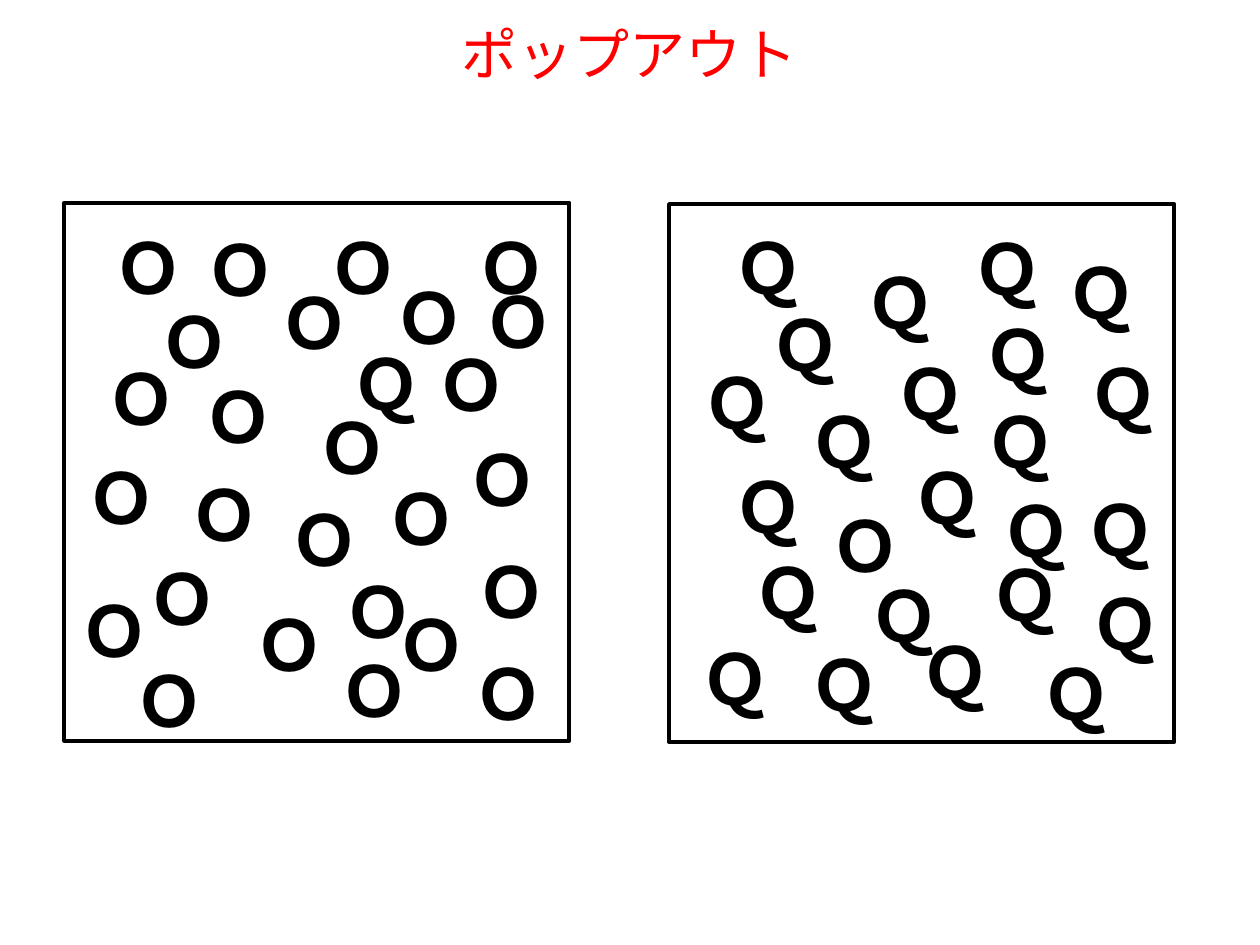
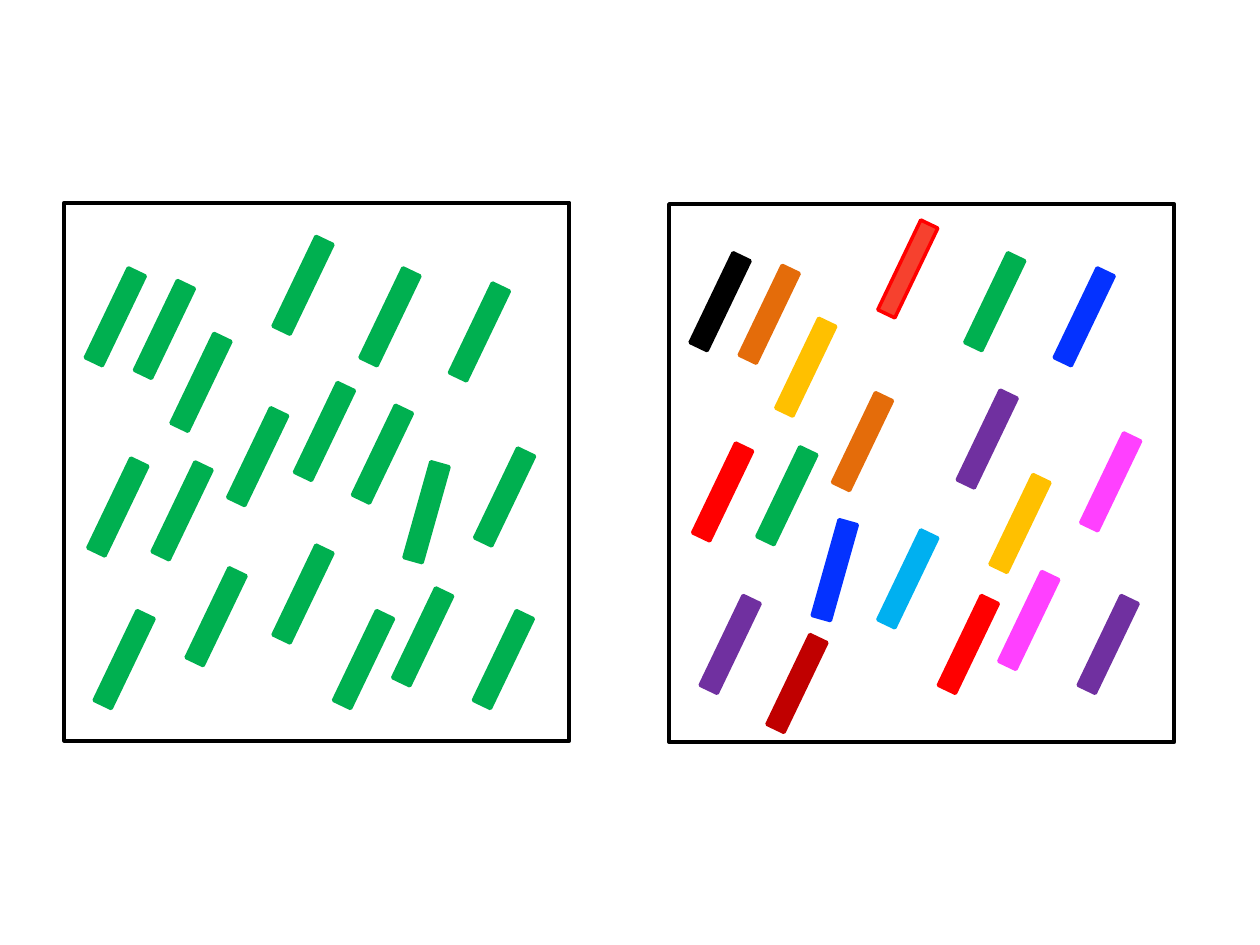
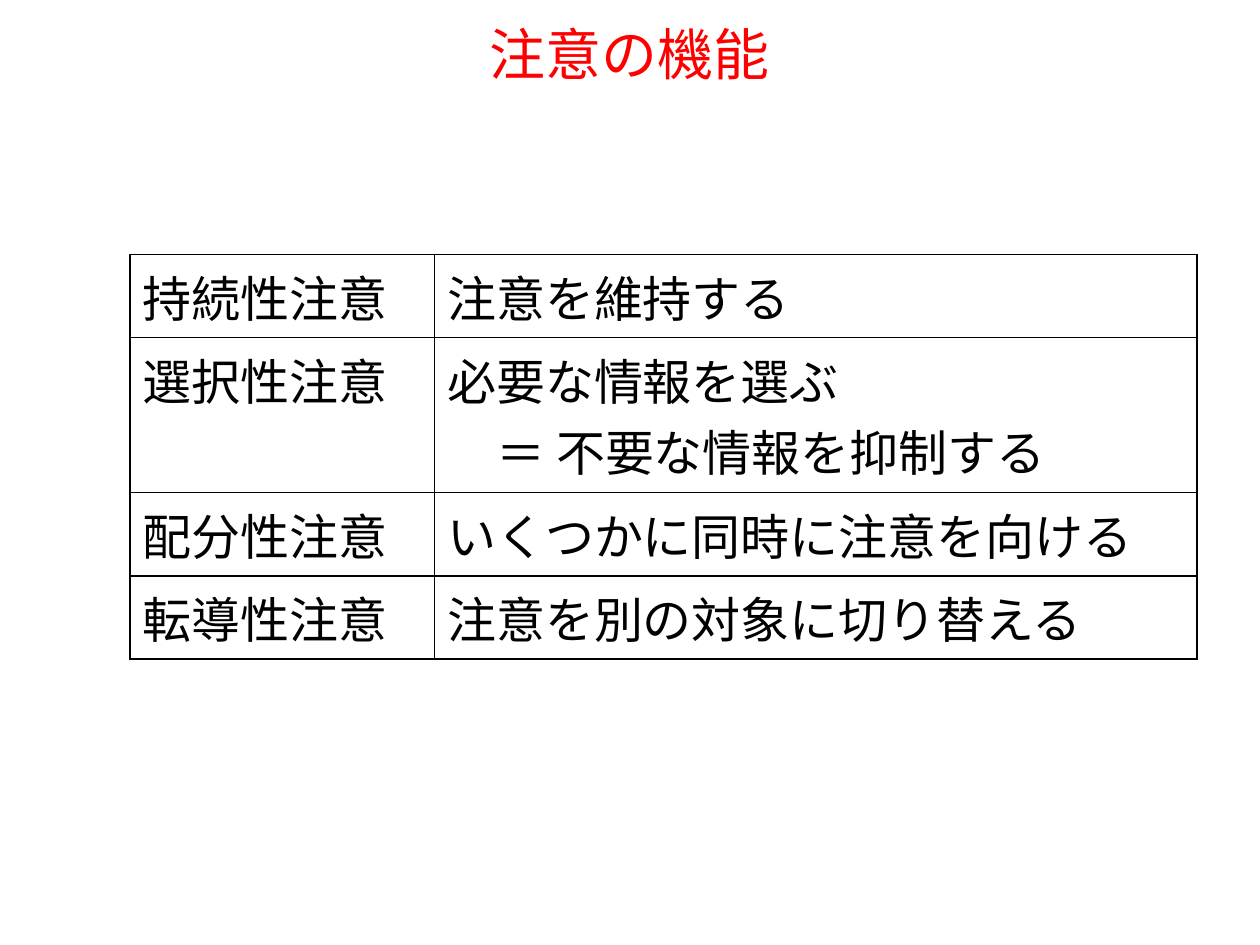
from lxml import etree
from pptx import Presentation
from pptx.dml.color import RGBColor
from pptx.enum.shapes import MSO_SHAPE as Preset
from pptx.enum.text import MSO_ANCHOR as Anchor, PP_ALIGN as Align
from pptx.oxml.ns import qn
from pptx.util import Inches, Pt

GOTHIC, SERIF = "Noto Sans CJK JP", "Times New Roman"
BLACK, RED, GREEN = "000000", "FF0000", "00B050"
ORANGE, YELLOW, PURPLE = "E46C0A", "FFC000", "7030A0"
BLUE, SKY, PINK, CRIMSON, TOMATO = "0432FF", "00B0F0", "FF40FF", "C00000", "F6412E"

LEFT_PANEL = (0.51, 1.61)
RIGHT_PANEL = (5.31, 1.62)
PANEL_SIZE = (4.01, 4.27)
BAR_TILT, TARGET_TILT = 25.6, 15.7

# Positions are offsets in inches from the panel's top left corner
O_SPOTS = [
    (1.01, 1.26), (1.91, 1.51), (2.46, 2.07), (2.54, 3.07), (0.56, 2.71),
    (2.86, 1.01), (1.41, 3.07), (0.08, 1.91), (0.66, 0.67), (3.10, 1.76),
    (3.17, 2.65), (0.46, 3.52), (1.61, 0.52), (0.90, 2.04), (2.09, 3.44),
    (2.52, 0.48), (0.24, 1.12), (0.02, 2.96), (2.12, 2.81), (2.00, 0.08),
    (1.02, 0.10), (0.29, 0.08), (3.23, 0.51), (1.69, 2.24), (3.17, 0.08),
    (3.15, 3.46),
]
Q_SPOTS = [
    (0.41, 1.97), (2.40, 0.76), (1.02, 1.45), (0.71, 0.68), (0.57, 2.65),
    (1.02, 3.38), (1.90, 3.28), (1.49, 2.83), (1.83, 1.90), (1.70, 1.07),
    (1.46, 0.35), (0.41, 0.07), (2.45, 2.67), (2.41, 1.45), (2.86, 3.45),
    (3.25, 2.90), (3.21, 2.15), (3.23, 1.07), (3.06, 0.27), (2.31, 0.08),
    (0.17, 1.14), (0.15, 3.33), (2.54, 2.16),
]
GREEN_SPOTS = [
    (0.33, 0.51), (0.72, 0.61), (1.01, 1.03), (1.46, 1.62), (1.99, 1.42),
    (1.82, 0.26), (0.86, 2.05), (0.35, 2.02), (2.45, 1.60), (2.51, 0.51),
    (1.82, 2.71), (2.77, 3.05), (3.42, 1.94), (1.13, 2.89), (3.41, 3.23),
    (0.40, 3.23), (3.22, 0.63), (2.30, 3.23),
]
COLOURED_BARS = [
    (0.33, 0.38, BLACK), (0.72, 0.48, ORANGE), (1.01, 0.90, YELLOW),
    (1.46, 1.49, ORANGE), (0.94, 3.41, CRIMSON), (1.82, 0.12, TOMATO),
    (0.86, 1.92, GREEN), (0.35, 1.89, RED), (2.45, 1.47, PURPLE),
    (2.51, 0.38, GREEN), (1.82, 2.58, SKY), (2.78, 2.91, PINK),
    (3.43, 1.81, PINK), (2.71, 2.14, YELLOW), (3.41, 3.10, PURPLE),
    (0.41, 3.10, PURPLE), (3.22, 0.50, BLUE), (2.30, 3.10, RED),
]
ATTENTION_ROWS = [
    ("持続性注意", "注意を維持する"),
    ("選択性注意", "必要な情報を選ぶ\n　＝ 不要な情報を抑制する"),
    ("配分性注意", "いくつかに同時に注意を向ける"),
    ("転導性注意", "注意を別の対象に切り替える"),
]


def colour(code):
    return RGBColor.from_string(code)


def style_text(frame, size, code=BLACK, font=GOTHIC, bold=False):
    for para in frame.paragraphs:
        for span in para.runs:
            span.font.size = Pt(size)
            span.font.bold = bold
            span.font.name = font
            span.font.color.rgb = colour(code)
            east_asian = etree.Element(qn("a:ea"), typeface=GOTHIC)
            span.font._element.find(qn("a:latin")).addnext(east_asian)


def add_text(shapes, text, left, top, width, height):
    box = shapes.add_textbox(Inches(left), Inches(top), Inches(width), Inches(height))
    box.text_frame.word_wrap = True
    box.text_frame.text = text
    return box.text_frame


def add_rectangle(shapes, left, top, width, height, line, weight, fill=None):
    box = shapes.add_shape(Preset.RECTANGLE, Inches(left), Inches(top),
                           Inches(width), Inches(height))
    box.shadow.inherit = False
    box.line.color.rgb = colour(line)
    box.line.width = Pt(weight)
    if fill:
        box.fill.solid()
        box.fill.fore_color.rgb = colour(fill)
    else:
        box.fill.background()
    return box


def add_title(page, text):
    frame = add_text(page.shapes, text, 0.5, 0.1, 9, 0.64)
    frame.vertical_anchor = Anchor.MIDDLE
    frame.paragraphs[0].alignment = Align.CENTER
    style_text(frame, 32, RED)


def add_panel(page, corner):
    """Draw the frame and return a group for what stands in it."""
    add_rectangle(page.shapes, *corner, *PANEL_SIZE, BLACK, 2.25)
    return page.shapes.add_group_shape().shapes


def letter_panel(page, corner, letters, font):
    shapes = add_panel(page, corner)
    for x, y, letter in letters:
        frame = add_text(shapes, letter, corner[0] + x, corner[1] + y, 0.6, 0.77)
        frame.paragraphs[0].line_spacing = Pt(51)
        style_text(frame, 40, font=font, bold=True)


def bar_panel(page, corner, bars, target):
    shapes = add_panel(page, corner)
    tilted = [(bar, BAR_TILT) for bar in bars] + [(target, TARGET_TILT)]
    for (x, y, code), tilt in tilted:
        edge = RED if code == TOMATO else code
        bar = add_rectangle(shapes, corner[0] + x, corner[1] + y, 0.15, 0.79,
                            edge, 2, code)
        bar.rotation = tilt


def add_borders(cell):
    properties = cell._tc.get_or_add_tcPr()
    for index, side in enumerate(("lnL", "lnR", "lnT", "lnB")):
        border = etree.Element(qn(f"a:{side}"), w=str(Pt(1)))
        fill = etree.SubElement(border, qn("a:solidFill"))
        etree.SubElement(fill, qn("a:srgbClr"), val=BLACK)
        properties.insert(index, border)


def attention_table(page, left, top, widths, line_height):
    heights = [line_height + 0.57 * text.count("\n") for _, text in ATTENTION_ROWS]
    table = page.shapes.add_table(
        len(heights), len(widths), Inches(left), Inches(top),
        Inches(sum(widths)), Inches(sum(heights))).table
    table.first_row = table.horz_banding = False
    for column, width in zip(table.columns, widths):
        column.width = Inches(width)
    for row, height, texts in zip(table.rows, heights, ATTENTION_ROWS):
        row.height = Inches(height)
        for cell, text in zip(row.cells, texts):
            cell.text_frame.text = text
            style_text(cell.text_frame, 28)
            cell.fill.background()
            add_borders(cell)


def main():
    deck = Presentation()
    deck.slide_width, deck.slide_height = Inches(10), Inches(7.5)
    blank = deck.slide_layouts[6]

    # Odd letter out
    page = deck.slides.add_slide(blank)
    add_title(page, "ポップアウト")
    letter_panel(page, LEFT_PANEL,
                 [(*spot, "Ｏ") for spot in O_SPOTS] + [(2.18, 1.00, "Ｑ")], SERIF)
    letter_panel(page, RIGHT_PANEL,
                 [(*spot, "Ｑ") for spot in Q_SPOTS] + [(1.18, 2.28, "Ｏ")], GOTHIC)

    # Odd tilt out
    page = deck.slides.add_slide(blank)
    bar_panel(page, LEFT_PANEL, [(*spot, GREEN) for spot in GREEN_SPOTS],
              (2.80, 2.06, GREEN))
    bar_panel(page, RIGHT_PANEL, COLOURED_BARS, (1.24, 2.51, BLUE))

    # Functions of attention
    page = deck.slides.add_slide(blank)
    add_title(page, "注意の機能")
    attention_table(page, 1.03, 2.02, (2.42, 6.05), 0.66)

    deck.save("out.pptx")


if __name__ == "__main__":
    main()
